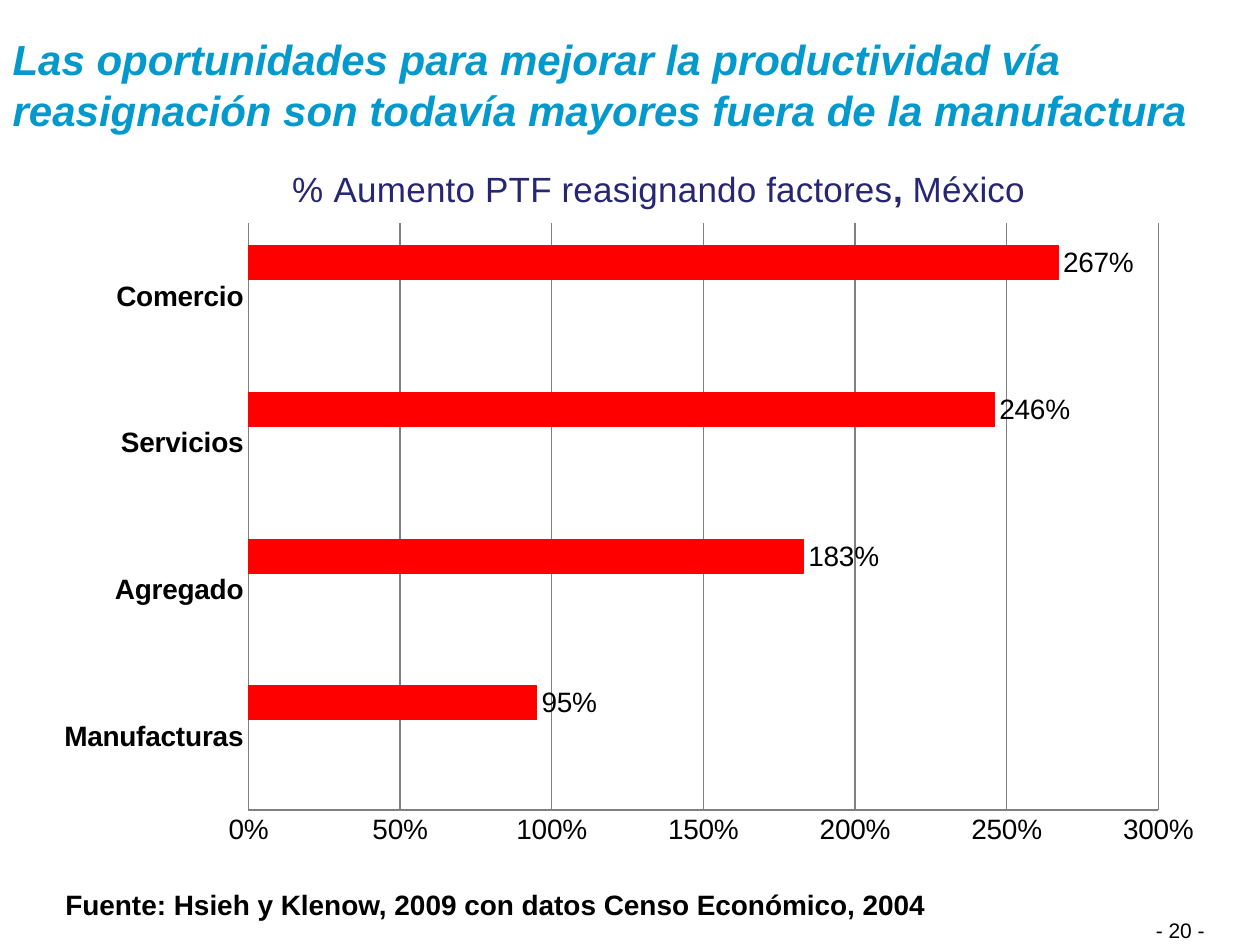
from lxml.etree import SubElement as Sub, Element
from pptx import Presentation
from pptx.chart.data import CategoryChartData as Data
from pptx.dml.color import RGBColor as RGB
from pptx.enum.chart import XL_CHART_TYPE as Kind, XL_LABEL_POSITION as Spot
from pptx.enum.chart import XL_TICK_MARK as Tick
from pptx.enum.text import MSO_ANCHOR as Anchor, PP_ALIGN as Align
from pptx.oxml.ns import qn
from pptx.util import Inches, Pt

INK = {
    "head": "0399CD", "text": "000000", "title": "262673", "grid": "808080",
    "first": "BBE0E3", "second": "333399", "bar": "FF0000",
}
FONT = "Arial"


def color(key):
    return RGB.from_string(INK[key])


def style(font, size, key="text", bold=False, slant=False):
    font.name, font.size = FONT, Pt(size)
    font.bold, font.italic = bold, slant
    font.color.rgb = color(key)


def place(node, inner=False, **share):
    """Fix the place of a chart part, as shares of the chart's size."""
    old = node.find(qn("c:layout"))
    if old is not None:
        node.remove(old)
    box = Element(qn("c:layout"))
    man = Sub(box, qn("c:manualLayout"))
    if inner:
        Sub(man, qn("c:layoutTarget"), val="inner")
    for side in ("x", "y"):
        Sub(man, qn(f"c:{side}Mode"), val="edge")
    for side, val in share.items():
        Sub(man, qn(f"c:{side}"), val=str(val))
    text = node.find(qn("c:tx"))
    node.insert(0 if text is None else 1, box)


class Deck:
    def __init__(self, wide, high):
        self.prs = Presentation()
        self.prs.slide_width, self.prs.slide_height = Inches(wide), Inches(high)
        self.slide = self.prs.slides.add_slide(self.prs.slide_layouts[5])

    def area(self, x, y, w, h):
        """Turn shares of the slide into lengths."""
        wide, high = self.prs.slide_width, self.prs.slide_height
        return int(x * wide), int(y * high), int(w * wide), int(h * high)

    def label(self, frame, text, align=Align.LEFT, **look):
        para = frame.paragraphs[0]
        para.alignment = align
        run = para.add_run()
        run.text = text
        style(run.font, **look)

    def head(self, text, *box):
        shape = self.slide.shapes.title
        shape.left, shape.top, shape.width, shape.height = self.area(*box)
        shape.text_frame.vertical_anchor = Anchor.MIDDLE
        self.label(shape.text_frame, text, size=24, key="head", bold=True, slant=True)

    def note(self, text, *box, wrap=True, **look):
        frame = self.slide.shapes.add_textbox(*self.area(*box)).text_frame
        frame.word_wrap = wrap
        self.label(frame, text, **look)

    def bars(self, cats, rows, title, *box):
        data = Data(number_format="0%")
        data.categories = cats
        for name, vals, _ in rows:
            data.add_series(name, vals)
        chart = self.slide.shapes.add_chart(
            Kind.BAR_CLUSTERED, *self.area(*box), data).chart
        style(chart.font, 16)
        chart.has_legend = False

        # Chart title
        frame = chart.chart_title.text_frame
        for text, bold in title:
            run = frame.paragraphs[0].add_run()
            run.text = text
            style(run.font, 20, "title", bold)
        place(chart.chart_title.element, x=0.21, y=0.04)
        place(chart.element.chart.plotArea, inner=True, x=0.176, y=0.12, w=0.774, h=0.81)

        # Axes and grid
        cat, val = chart.category_axis, chart.value_axis
        for axis in (cat, val):
            axis.major_tick_mark = axis.minor_tick_mark = Tick.NONE
        style(cat.tick_labels.font, 16, bold=True)
        style(val.tick_labels.font, 16)
        val.minimum_scale, val.maximum_scale, val.major_unit = 0, 3, 0.5
        val.tick_labels.number_format = "0%"
        val.tick_labels.number_format_is_linked = False
        for line in (cat.format.line, val.format.line, val.major_gridlines.format.line):
            line.color.rgb, line.width = color("grid"), Pt(0.75)

        # Bars and their values
        plot = chart.plots[0]
        plot.vary_by_categories = False
        plot.gap_width, plot.overlap = 135, 0
        for row, (_, vals, key) in zip(plot.series, rows):
            row.format.fill.solid()
            row.format.fill.fore_color.rgb = color(key)
            if any(vals):
                row.format.line.color.rgb, row.format.line.width = color(key), Pt(0.75)
                tags = row.data_labels
                tags.show_value, tags.position = True, Spot.OUTSIDE_END
                tags.number_format, tags.number_format_is_linked = "0%", False
                style(tags.font, 16)


def main():
    deck = Deck(10, 7.5)

    # Heading
    deck.head("Las oportunidades para mejorar la productividad vía reasignación "
              "son todavía mayores fuera de la manufactura", 0, 0.044, 1, 0.09)

    # Gains by sector; two empty series keep the bars above the centre
    cats = ["Manufacturas", "Agregado", "Servicios", "Comercio"]
    gap = [None] * len(cats)
    rows = [("Series 1", gap, "first"), ("Series 2", gap, "second"),
            ("Series 3", [0.95, 1.83, 2.46, 2.67], "bar")]
    title = [("% Aumento PTF reasignando factores", False), (",", True), (" México", False)]
    deck.bars(cats, rows, title, 0.033, 0.144, 0.933, 0.767)

    # Source and page number
    deck.note("Fuente: Hsieh y Klenow, 2009 con datos Censo Económico, 2004",
              0.042, 0.933, 0.711, 0.049, wrap=False, size=16, bold=True)
    deck.note("- 20 -", 0.708, 0.964, 0.258, 0.036, align=Align.RIGHT, size=12)

    deck.prs.save("out.pptx")


if __name__ == "__main__":
    main()
